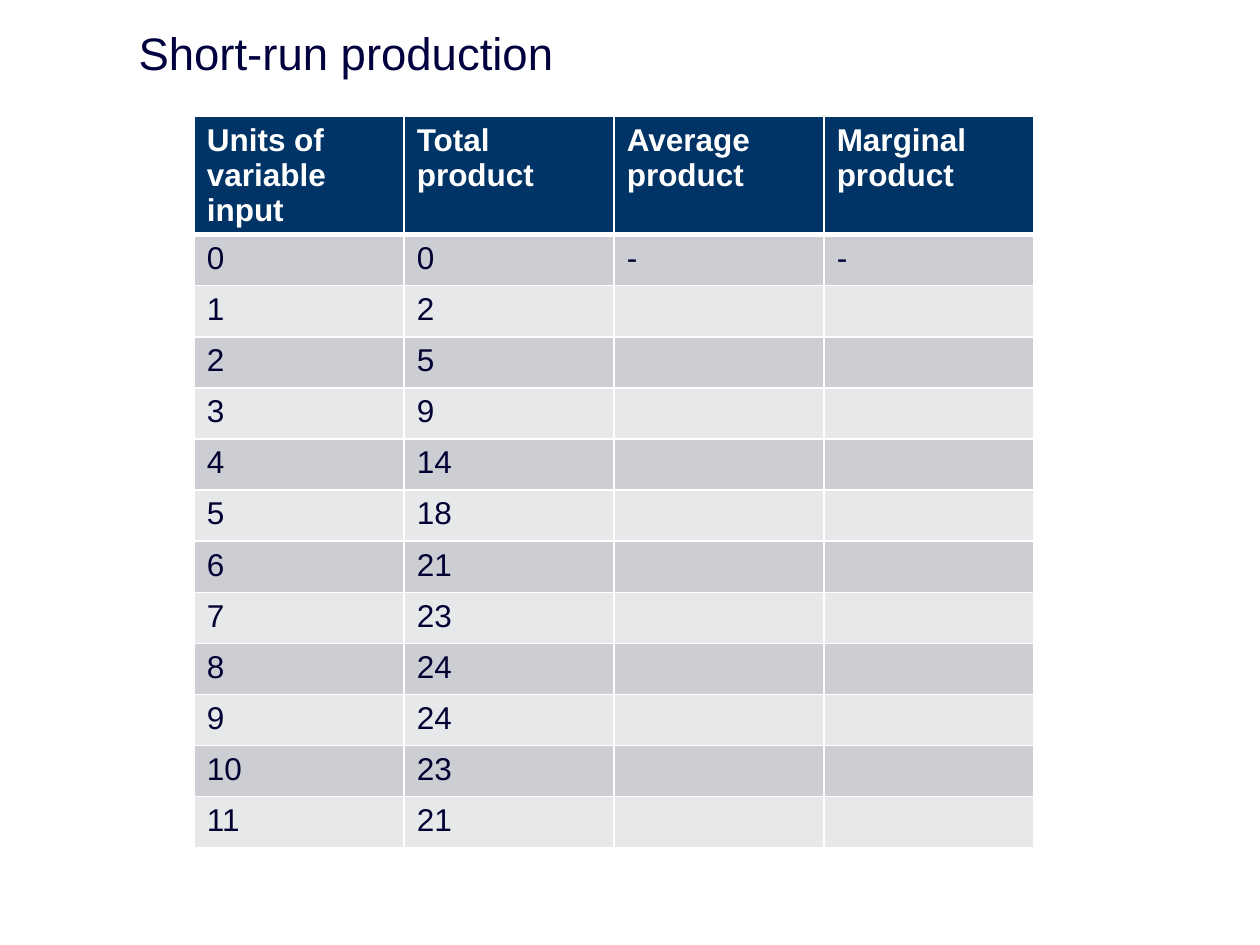
from lxml import etree
from pptx import Presentation
from pptx.dml.color import RGBColor
from pptx.enum.text import MSO_ANCHOR, PP_ALIGN
from pptx.oxml.ns import qn
from pptx.util import Pt

MIDDLE = MSO_ANCHOR.MIDDLE
LEFT = PP_ALIGN.LEFT
TITLE_ONLY = 5
FONT = "Arial"
HEADERS = ["Units of variable input", "Total product",
           "Average product", "Marginal product"]
TOTAL_PRODUCT = [0, 2, 5, 9, 14, 18, 21, 23, 24, 24, 23, 21]
HEADER_HEIGHT = 67
BANDS = ["CCCED3", "E7E8EA"]


def color(value):
    return RGBColor.from_string(value)


def format_text(p, size, text_color, bold=False):
    p.font.name = FONT
    p.font.size = Pt(size)
    p.font.bold = bold
    p.font.color.rgb = color(text_color)
    for r in p.runs:
        r.font.name = FONT
        r.font.size = Pt(size)
        r.font.bold = bold
        r.font.color.rgb = color(text_color)


def add_borders(cell, bottom):
    tc_pr = cell._tc.get_or_add_tcPr()
    for side, width in (("L", 1), ("R", 1), ("T", 1), ("B", bottom)):
        line = etree.SubElement(tc_pr, qn(f"a:ln{side}"), w=str(Pt(width)))
        fill = etree.SubElement(line, qn("a:solidFill"))
        etree.SubElement(fill, qn("a:srgbClr"), val="FFFFFF")


def fill_cell(cell, text, fill, text_color, bold=False, bottom=1):
    add_borders(cell, bottom)
    cell.fill.solid()
    cell.fill.fore_color.rgb = color(fill)
    cell.text_frame.text = text
    format_text(cell.text_frame.paragraphs[0], 18, text_color, bold)


def place_title(s, left, top, width, height):
    sp = s.shapes.title
    sp.left, sp.top, sp.width, sp.height = Pt(left), Pt(top), Pt(width), Pt(height)
    tf = sp.text_frame
    tf.text = "Short-run production"
    tf.vertical_anchor = MIDDLE
    p = tf.paragraphs[0]
    p.alignment = LEFT
    format_text(p, 26, "00003E")


def place_production_table(s, left, top, width, height):
    row_count = len(TOTAL_PRODUCT) + 1
    table = s.shapes.add_table(row_count, len(HEADERS), Pt(left), Pt(top),
                               Pt(width), Pt(height)).table
    for column in table.columns:
        column.width = Pt(width / len(HEADERS))
    for row in table.rows:
        row.height = Pt((height - HEADER_HEIGHT) / len(TOTAL_PRODUCT))
    table.rows[0].height = Pt(HEADER_HEIGHT)

    for col, header in enumerate(HEADERS):
        fill_cell(table.cell(0, col), header, "003366", "FFFFFF", True, 3)
    for units, total in enumerate(TOTAL_PRODUCT):
        blank = "-" if units == 0 else ""
        for col, text in enumerate([str(units), str(total), blank, blank]):
            fill_cell(table.cell(units + 1, col), text, BANDS[units % 2], "000032")


def main():
    prs = Presentation()
    prs.slide_width, prs.slide_height = Pt(720), Pt(540)
    s = prs.slides.add_slide(prs.slide_layouts[TITLE_ONLY])
    place_title(s, 72, 11.5, 648, 37)
    place_production_table(s, 111, 66.4, 480, 417.4)
    prs.save("out.pptx")


if __name__ == "__main__":
    main()
